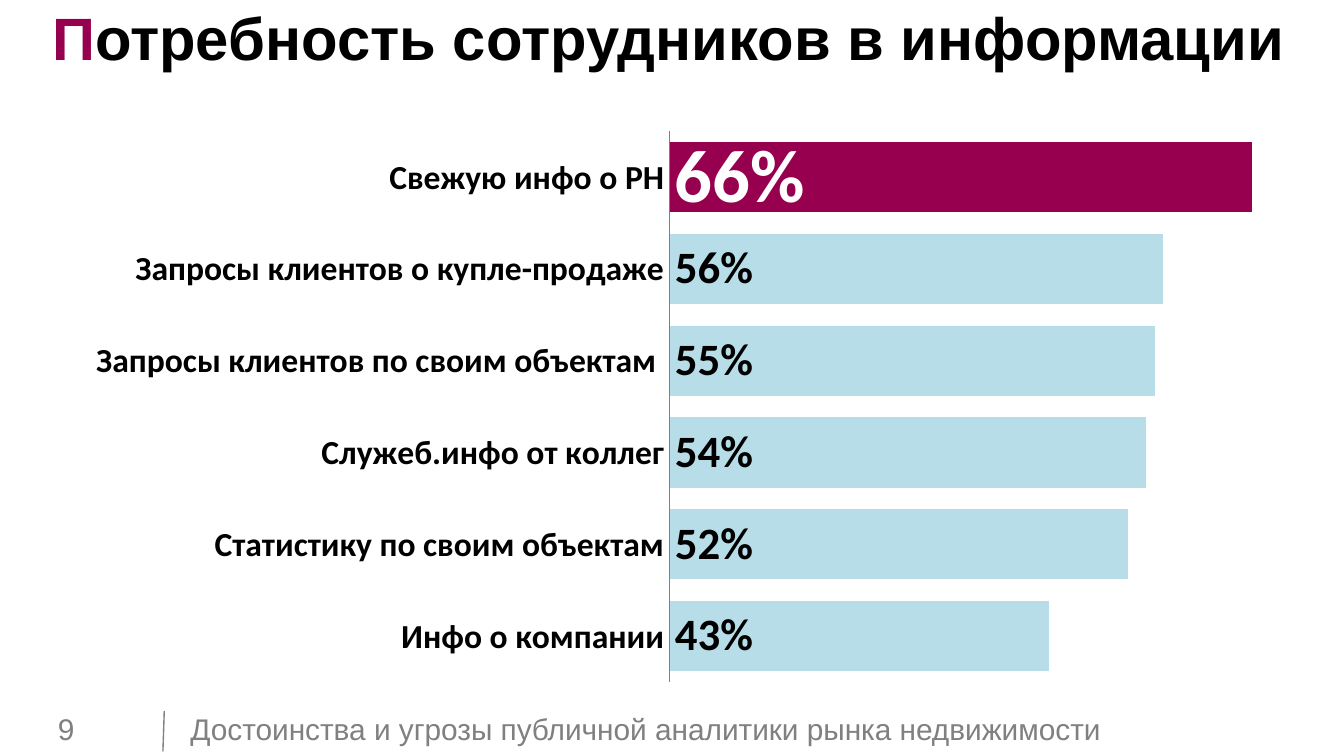
"""Build a slide with a bar chart of the information that employees need."""
from dataclasses import dataclass

from lxml import etree
from pptx import Presentation
from pptx import util as u
from pptx.chart import data as chart_data
from pptx.dml import color
from pptx.enum import chart as charts, shapes, text
from pptx.oxml import ns, parse_xml


@dataclass(frozen=True)
class Theme:
    accent: str = "96004F"
    bar: str = "B7DEE8"
    ink: str = "000000"
    paper: str = "FFFFFF"
    muted: str = "808080"
    heading_font: str = "Arial"
    chart_font: str = "Calibri"
    title_size: int = 32
    footer_size: int = 16
    category_size: int = 18
    value_size: int = 24
    top_value_size: int = 40


THEME = Theme()
NEEDS = {
    "Инфо о компании": 0.43,
    "Статистику по своим объектам": 0.52,
    "Служеб.инфо от коллег": 0.54,
    "Запросы клиентов по своим объектам ": 0.55,
    "Запросы клиентов о купле-продаже": 0.56,
    "Свежую инфо о РН": 0.66,
}
PLOT = {"x": 0.494, "y": 0, "w": 0.497, "h": 0.98}
FRAME = {
    "margin_left": 0, "margin_top": 0, "margin_right": 0, "margin_bottom": 0,
    "word_wrap": True,
    "auto_size": text.MSO_AUTO_SIZE.NONE,
    "vertical_anchor": text.MSO_ANCHOR.MIDDLE,
}


def apply(target, values):
    for name, value in values.items():
        setattr(target, name, value)


def set_font(font, size, ink, name=THEME.heading_font, bold=False):
    apply(font, {"size": u.Pt(size), "name": name, "bold": bold})
    font.color.rgb = color.RGBColor.from_string(ink)


def set_fill(fill, ink):
    fill.solid()
    fill.fore_color.rgb = color.RGBColor.from_string(ink)


def set_line(line, ink):
    line.width = u.Pt(0.75)
    line.color.rgb = color.RGBColor.from_string(ink)


def add_title(slide, initial, rest):
    title = slide.shapes.title
    apply(title, {"left": u.Pt(0), "top": u.Pt(0), "width": u.Pt(720), "height": u.Pt(49)})
    apply(title.text_frame, FRAME)
    paragraph = title.text_frame.paragraphs[0]
    apply(paragraph, {"alignment": text.PP_ALIGN.LEFT, "line_spacing": 0.7})
    paragraph._p.get_or_add_pPr().set("indent", str(u.Pt(28)))
    for wording, ink in ((initial, THEME.accent), (rest, THEME.ink)):
        run = paragraph.add_run()
        run.text = wording
        set_font(run.font, THEME.title_size, ink, bold=True)


def add_footer_text(slide, wording, left, width):
    box = slide.shapes.add_textbox(u.Pt(left), u.Pt(378), u.Pt(width), u.Pt(24.5))
    apply(box.text_frame, FRAME)
    paragraph = box.text_frame.paragraphs[0]
    run = paragraph.add_run()
    run.text = wording
    set_font(run.font, THEME.footer_size, THEME.muted)


def add_footer_rule(slide):
    rule = slide.shapes.add_connector(
        shapes.MSO_CONNECTOR.STRAIGHT, u.Pt(88), u.Pt(381), u.Pt(87.3), u.Pt(402.5))
    set_line(rule.line, THEME.muted)
    etree.SubElement(rule._element.spPr, ns.qn("a:effectLst"))


def place_plot(chart):
    plot_area = chart.element.find(".//" + ns.qn("c:plotArea"))
    for layout in plot_area.findall(ns.qn("c:layout")):
        plot_area.remove(layout)
    modes = "".join(f'<c:{axis}Mode val="edge"/>' for axis in "xy")
    sizes = "".join(f'<c:{side} val="{share}"/>' for side, share in PLOT.items())
    plot_area.insert(0, parse_xml(
        f'<c:layout {ns.nsdecls("c")}><c:manualLayout><c:layoutTarget val="inner"/>'
        f"{modes}{sizes}</c:manualLayout></c:layout>"))


def format_axes(chart):
    axis = chart.category_axis
    apply(axis, {"major_tick_mark": charts.XL_TICK_MARK.NONE, "has_major_gridlines": False})
    set_line(axis.format.line, THEME.muted)
    apply(chart.value_axis, {"visible": False, "has_major_gridlines": False,
                             "minimum_scale": 0, "maximum_scale": 0.7})


def format_bars(plot):
    position = charts.XL_LABEL_POSITION.INSIDE_BASE
    apply(plot, {"gap_width": 31, "vary_by_categories": False})
    series = plot.series[0]
    set_fill(series.format.fill, THEME.bar)
    labels = series.data_labels
    apply(labels, {"show_value": True, "number_format": "0%",
                   "number_format_is_linked": False, "position": position})
    set_font(labels.font, THEME.value_size, THEME.ink, THEME.chart_font, True)
    top = series.points[len(NEEDS) - 1]
    set_fill(top.format.fill, THEME.accent)
    set_font(top.data_label.font, THEME.top_value_size, THEME.paper, THEME.chart_font, True)
    top.data_label.position = position


def add_needs_chart(slide):
    needs = chart_data.CategoryChartData(number_format="0%")
    needs.categories = list(NEEDS)
    needs.add_series("Series 1", list(NEEDS.values()))
    chart = slide.shapes.add_chart(
        charts.XL_CHART_TYPE.BAR_CLUSTERED,
        u.Pt(30), u.Pt(70), u.Pt(665.5), u.Pt(301.5), needs).chart
    apply(chart, {"has_legend": False, "has_title": False})
    set_font(chart.font, THEME.category_size, THEME.ink, THEME.chart_font, True)
    format_axes(chart)
    format_bars(chart.plots[0])
    place_plot(chart)


def main():
    presentation = Presentation()
    apply(presentation, {"slide_width": u.Pt(720), "slide_height": u.Pt(405)})
    slide = presentation.slides.add_slide(presentation.slide_layouts[5])
    add_footer_text(slide, "9", 31, 65)
    add_footer_rule(slide)
    add_footer_text(
        slide, "Достоинства и угрозы публичной аналитики рынка недвижимости", 102, 502)
    add_title(slide, "П", "отребность сотрудников в информации")
    add_needs_chart(slide)
    presentation.save("out.pptx")


if __name__ == "__main__":
    main()
